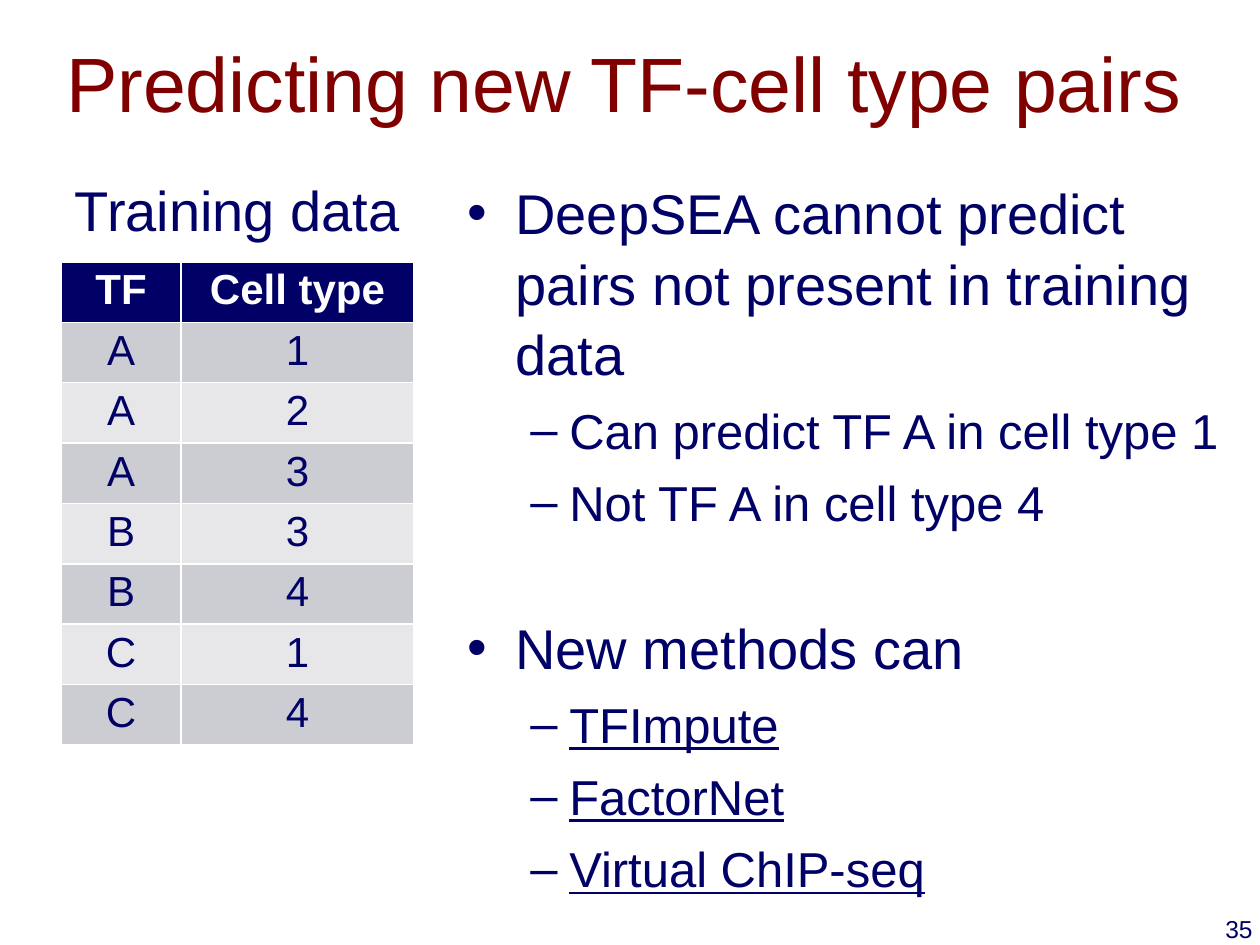
from dataclasses import dataclass
from lxml import etree
from pptx import Presentation
from pptx import util as u
from pptx.dml.color import RGBColor
from pptx.enum import text
from pptx.oxml import ns

PX = u.Inches(1) // 126


@dataclass(frozen=True)
class Theme:
    font: str = "Arial"
    navy: str = "000066"
    red: str = "800000"
    white: str = "FFFFFF"
    bands: tuple = ("CCCCD3", "E7E7EA")
    title: int = 44
    head: int = 32
    sub: int = 28
    cell: int = 24
    small: int = 14


class Deck:
    def __init__(self, theme):
        self.theme = theme
        self.file = Presentation()
        self.file.slide_width, self.file.slide_height = 1260 * PX, 945 * PX
        self.slide = self.file.slides.add_slide(self.file.slide_layouts[5])

    def run(self, para, words, size, color, bold=False, line=False):
        run = para.add_run()
        run.text = words
        font = run.font
        font.name, font.size = self.theme.font, u.Pt(size)
        font.bold, font.underline = bold, line
        font.color.rgb = RGBColor.from_string(color)

    def title(self, words, left, top, width, height):
        shape = self.slide.shapes.title
        shape.left, shape.top = left * PX, top * PX
        shape.width, shape.height = width * PX, height * PX
        frame = shape.text_frame
        frame.auto_size = text.MSO_AUTO_SIZE.NONE
        frame.vertical_anchor = text.MSO_ANCHOR.MIDDLE
        para = frame.paragraphs[0]
        para.alignment = text.PP_ALIGN.CENTER
        self.run(para, words, self.theme.title, self.theme.red)

    def box(self, left, top, width, height):
        shape = self.slide.shapes.add_textbox(left * PX, top * PX, width * PX, height * PX)
        shape.text_frame.word_wrap = True
        return shape.text_frame

    def label(self, words, size, align, *area):
        para = self.box(*area).paragraphs[0]
        para.alignment = align
        self.run(para, words, size, self.theme.navy)

    def bullet(self, para, mark, left, hang):
        props = para._p.get_or_add_pPr()
        props.set("marL", str(left * PX))
        props.set("indent", str(-hang * PX))
        etree.SubElement(props, ns.qn("a:buFont"), typeface=self.theme.font)
        etree.SubElement(props, ns.qn("a:buChar"), char=mark)

    def list(self, items, *area):
        frame = self.box(*area)
        for i, (level, words, gap, line) in enumerate(items):
            para = frame.add_paragraph() if i else frame.paragraphs[0]
            para.level = level
            para.line_spacing = 1.05
            para.space_before = u.Pt(gap)
            if level:
                self.bullet(para, "–", 102, 39)
            else:
                self.bullet(para, "•", 48, 48)
            size = self.theme.sub if level else self.theme.head
            self.run(para, words, size, self.theme.navy, line=line)

    def table(self, rows, cols, left, top, height):
        theme = self.theme
        grid = self.slide.shapes.add_table(
            len(rows), len(cols), left * PX, top * PX, sum(cols) * PX, height * PX).table
        for col, width in zip(grid.columns, cols):
            col.width = width * PX
        for r, row in enumerate(rows):
            fill = theme.bands[(r - 1) % 2] if r else theme.navy
            for c, words in enumerate(row):
                cell = grid.cell(r, c)
                cell.margin_top = cell.margin_bottom = 5 * PX
                cell.fill.solid()
                cell.fill.fore_color.rgb = RGBColor.from_string(fill)
                para = cell.text_frame.paragraphs[0]
                para.alignment = text.PP_ALIGN.CENTER
                color = theme.navy if r else theme.white
                self.run(para, words, theme.cell, color, bold=r == 0)


def main():
    theme = Theme()
    deck = Deck(theme)
    align = text.PP_ALIGN
    deck.label("35", theme.small, align.RIGHT, 1003, 908, 262, 63)
    deck.title("Predicting new TF-cell type pairs", 21, 3, 1207, 157)
    deck.list([
        (0, "DeepSEA cannot predict pairs not present in training data", 0, False),
        (1, "Can predict TF A in cell type 1", 6, False),
        (1, "Not TF A in cell type 4", 6, False),
        (0, "New methods can", 45, False),
        (1, "TFImpute", 6, True),
        (1, "FactorNet", 6, True),
        (1, "Virtual ChIP-seq", 6, True),
    ], 455, 169, 782, 488)
    pairs = ["A1", "A2", "A3", "B3", "B4", "C1", "C4"]
    deck.table([("TF", "Cell type"), *pairs], (120, 233), 61, 262, 476)
    deck.label("Training data", theme.head, align.CENTER, 42, 169, 391, 81)
    deck.file.save("out.pptx")


if __name__ == "__main__":
    main()
